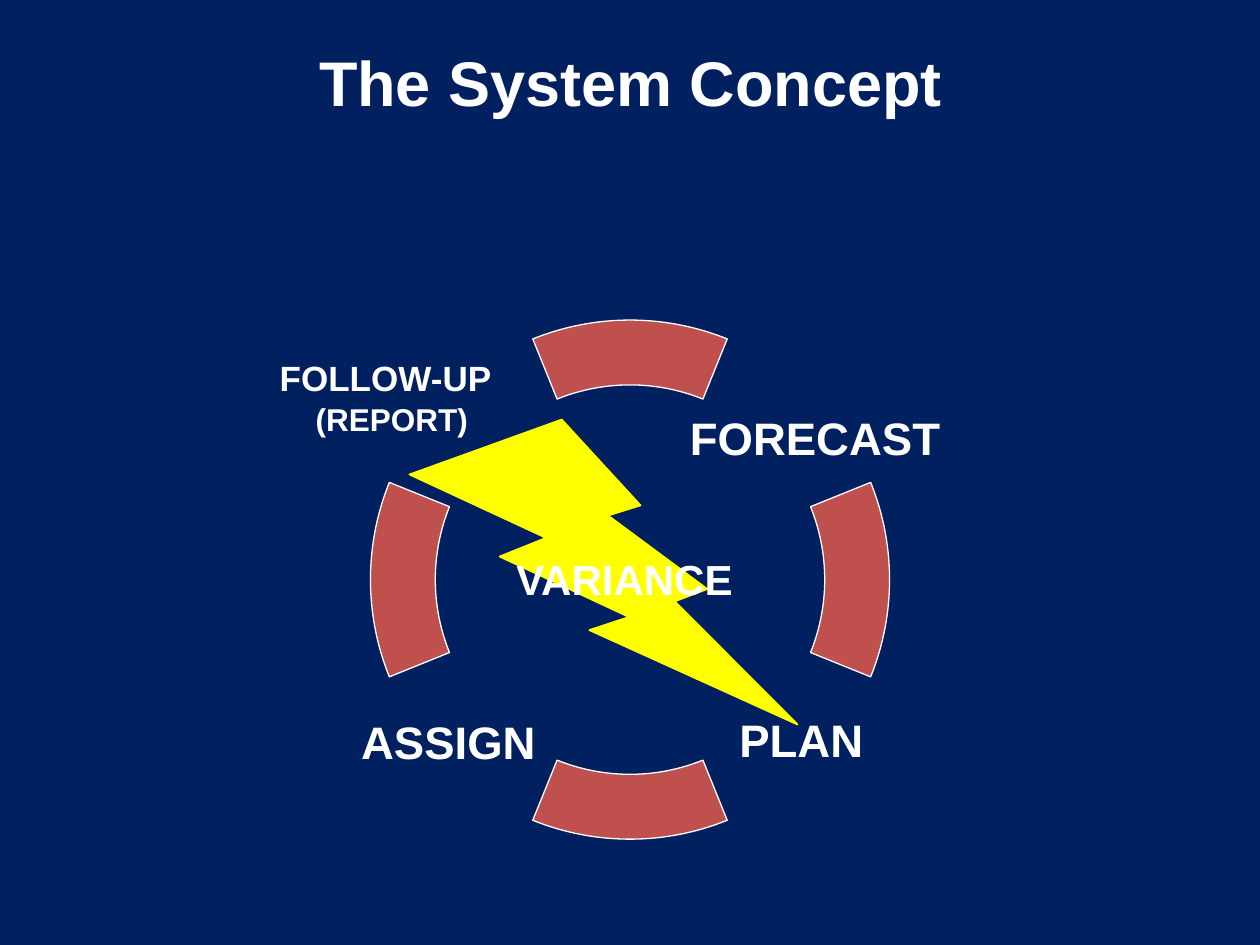
from pptx import Presentation, util as u
from pptx.dml.color import RGBColor
from pptx.enum import shapes, text

NAVY, RED, YELLOW, WHITE = "002060", "C0504D", "FFFF00", "FFFFFF"
CENTER_X, CENTER_Y, DIAMETER = 5, 4.6, 4.12


def rgb(value):
    return RGBColor.from_string(value)


def add_text(p, content, size=26, color=WHITE, bold=True, font="Arial"):
    r = p.add_run()
    r.text = content
    r.font.name, r.font.size, r.font.bold = font, u.Pt(size), bold
    r.font.color.rgb = rgb(color)


class SlideBuilder:
    def __init__(self, prs):
        self.s = prs.slides.add_slide(prs.slide_layouts[5])
        self.s.background.fill.solid()
        self.s.background.fill.fore_color.rgb = rgb(NAVY)

    def title(self, content, *box):
        sp = self.s.shapes.title
        sp.left, sp.top, sp.width, sp.height = map(u.Inches, box)
        tf = sp.text_frame
        tf.word_wrap = False
        tf.vertical_anchor = text.MSO_ANCHOR.MIDDLE
        tf.paragraphs[0].alignment = text.PP_ALIGN.CENTER
        add_text(tf.paragraphs[0], content, size=36)

    def shape(self, kind, *box, fill, line, width):
        sp = self.s.shapes.add_shape(kind, *map(u.Inches, box))
        sp.shadow.inherit = False
        sp.fill.solid()
        sp.fill.fore_color.rgb = rgb(fill)
        sp.line.color.rgb = rgb(line)
        sp.line.width = u.Pt(width)
        return sp

    def ring_segment(self, rotation):
        """Add a 44-degree arc of the ring, turned clockwise from the top."""
        sp = self.shape(shapes.MSO_SHAPE.BLOCK_ARC,
                        CENTER_X - DIAMETER / 2, CENTER_Y - DIAMETER / 2,
                        DIAMETER, DIAMETER, fill=RED, line=WHITE, width=0.75)
        # Angles count in 60000ths of a degree, adjustments in 100000ths
        for i, value in enumerate((248 * 0.6, 292 * 0.6, 0.125)):
            sp.adjustments[i] = value
        sp.rotation = rotation

    def label(self, lines, *box, align=text.PP_ALIGN.CENTER,
              anchor=text.MSO_ANCHOR.MIDDLE):
        """Add a text box; each line is a list of (text, size) runs."""
        tf = self.s.shapes.add_textbox(*map(u.Inches, box)).text_frame
        tf.word_wrap, tf.vertical_anchor = True, anchor
        for i, runs in enumerate(lines):
            p = tf.add_paragraph() if i else tf.paragraphs[0]
            p.alignment = align
            for content, size in runs:
                add_text(p, content, size=size)


def main():
    prs = Presentation()
    prs.slide_width, prs.slide_height = u.Inches(10), u.Inches(7.5)
    slide = SlideBuilder(prs)
    slide.shape(shapes.MSO_SHAPE.LIGHTNING_BOLT, 3.25, 3.33, 3.08, 2.42,
                fill=YELLOW, line=YELLOW, width=1)
    for rotation in (270, 0, 90, 180):
        slide.ring_segment(rotation)

    # Each step: lines, centre of the label, top and width
    steps = [
        ([[("FORECAST", 26)]], 6.47, 2.94, 2.3),
        ([[("PLAN", 26)]], 6.36, 5.34, 1.3),
        ([[("ASSIGN", 26)]], 3.56, 5.35, 1.7),
        ([[("FOLLOW-UP", 20), (" ", 26)], [("(REPORT)", 18)]],
         3.11, 2.58, 2.1),
    ]
    for lines, center, top, width in steps:
        slide.label(lines, center - width / 2, top, width, 1.06)
    slide.label([[("VARIANCE", 24)]], 4, 4.34, 2, 0.5,
                align=text.PP_ALIGN.LEFT, anchor=text.MSO_ANCHOR.TOP)
    slide.title("The System Concept", 2.34, 0.27, 5.33, 0.75)
    prs.save("out.pptx")


if __name__ == "__main__":
    main()
